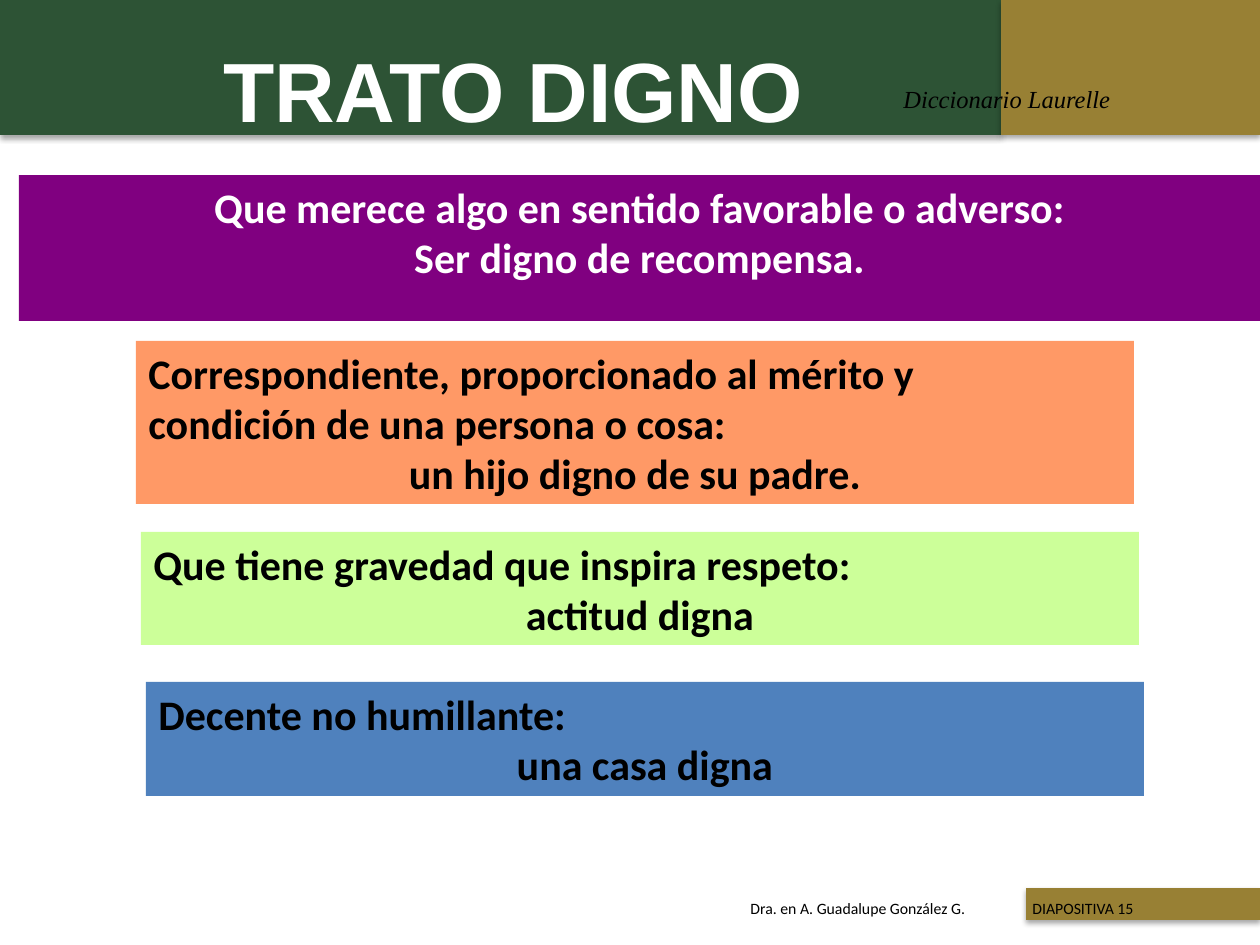
from dataclasses import dataclass

from lxml.etree import SubElement
from pptx import Presentation
from pptx.dml.color import RGBColor
from pptx.enum.shapes import MSO_SHAPE
from pptx.enum.text import MSO_ANCHOR, PP_ALIGN
from pptx.oxml.ns import qn
from pptx.util import Emu, Pt

PX = 914400 / 126

BLACK = RGBColor(0x00, 0x00, 0x00)
WHITE = RGBColor(0xFF, 0xFF, 0xFF)
GREEN = RGBColor(0x2D, 0x53, 0x35)
GOLD = RGBColor(0x98, 0x80, 0x34)
PURPLE = RGBColor(0x80, 0x00, 0x80)
ORANGE = RGBColor(0xFF, 0x99, 0x66)
LIME = RGBColor(0xCC, 0xFF, 0x99)
BLUE = RGBColor(0x4F, 0x81, 0xBD)

LEFT, CENTER = PP_ALIGN.LEFT, PP_ALIGN.CENTER


@dataclass(frozen=True)
class Box:
    x: int
    y: int
    w: int
    h: int

    def emu(self) -> list[Emu]:
        return [px(v) for v in (self.x, self.y, self.w, self.h)]


@dataclass(frozen=True)
class Style:
    size: int
    color: RGBColor = BLACK
    font: str = "Calibri"
    bold: bool = False
    italic: bool = False


@dataclass(frozen=True)
class Line:
    text: str
    align: PP_ALIGN = LEFT


@dataclass(frozen=True)
class Meaning:
    box: Box
    fill: RGBColor
    color: RGBColor
    lines: tuple[Line, ...]


BARS = (
    (Box(0, 0, 1001, 135), GREEN),
    (Box(1001, 0, 259, 135), GOLD),
    (Box(1026, 888, 234, 32), GOLD),
)

MEANINGS = (
    Meaning(Box(19, 175, 1241, 146), PURPLE, WHITE, (
        Line("Que merece algo en sentido favorable o adverso:", CENTER),
        Line("Ser digno de recompensa.", CENTER),
    )),
    Meaning(Box(136, 341, 998, 163), ORANGE, BLACK, (
        Line("Correspondiente, proporcionado al mérito y"),
        Line("condición de una persona o cosa:"),
        Line("un hijo digno de su padre.", CENTER),
    )),
    Meaning(Box(141, 532, 998, 113), LIME, BLACK, (
        Line("Que tiene gravedad que inspira respeto:"),
        Line("actitud digna", CENTER),
    )),
    Meaning(Box(146, 682, 998, 114), BLUE, BLACK, (
        Line("Decente no humillante:"),
        Line("una casa digna", CENTER),
    )),
)


def px(n: int) -> Emu:
    return Emu(round(n * PX))


def add_rect(s, box: Box, fill: RGBColor):
    sp = s.shapes.add_shape(MSO_SHAPE.RECTANGLE, *box.emu())
    sp.shadow.inherit = False
    sp.fill.solid()
    sp.fill.fore_color.rgb = fill
    sp.line.fill.background()
    return sp


def add_shadow(sp) -> None:
    effects = sp._element.spPr.find(qn("a:effectLst"))
    shadow = SubElement(effects, qn("a:outerShdw"), blurRad="40000",
                        dist="23000", dir="5400000", rotWithShape="0")
    color = SubElement(shadow, qn("a:srgbClr"), val="000000")
    SubElement(color, qn("a:alpha"), val="35000")


def write(sp, lines: tuple[Line, ...], style: Style,
          anchor: MSO_ANCHOR = MSO_ANCHOR.TOP, wrap: bool = True):
    tf = sp.text_frame
    tf.word_wrap = wrap
    tf.vertical_anchor = anchor
    for i, line in enumerate(lines):
        p = tf.add_paragraph() if i else tf.paragraphs[0]
        p.alignment = line.align
        r = p.add_run()
        r.text = line.text
        r.font.size = Pt(style.size)
        r.font.name = style.font
        r.font.bold = style.bold
        r.font.italic = style.italic
        r.font.color.rgb = style.color
    return tf


def add_text(s, box: Box, text: str, style: Style, align: PP_ALIGN = LEFT,
             anchor: MSO_ANCHOR = MSO_ANCHOR.TOP, wrap: bool = True):
    sp = s.shapes.add_textbox(*box.emu())
    return write(sp, (Line(text, align),), style, anchor, wrap)


def add_tab_stop(p, pos: int) -> None:
    tabs = SubElement(p._p.get_or_add_pPr(), qn("a:tabLst"))
    SubElement(tabs, qn("a:tab"), pos=str(px(pos)), algn="l")


def main() -> None:
    prs = Presentation()
    prs.slide_width, prs.slide_height = px(1260), px(945)
    s = prs.slides.add_slide(prs.slide_layouts[6])

    for box, fill in BARS:
        add_shadow(add_rect(s, box, fill))

    footer = add_text(s, Box(738, 893, 509, 32),
                      "Dra. en A. Guadalupe González G.\tDIAPOSITIVA 15", Style(9))
    add_tab_stop(footer.paragraphs[0], 282)

    title = add_text(s, Box(15, 10, 1033, 158), "TRATO DIGNO",
                     Style(48, WHITE, "Arial", bold=True),
                     CENTER, MSO_ANCHOR.MIDDLE)
    title.margin_right = px(49)

    add_text(s, Box(891, 78, 241, 42), "Diccionario Laurelle",
             Style(14, font="Times New Roman", italic=True), wrap=False)

    for m in MEANINGS:
        write(add_rect(s, m.box, m.fill), m.lines, Style(24, m.color, bold=True))

    prs.save("out.pptx")


if __name__ == "__main__":
    main()
